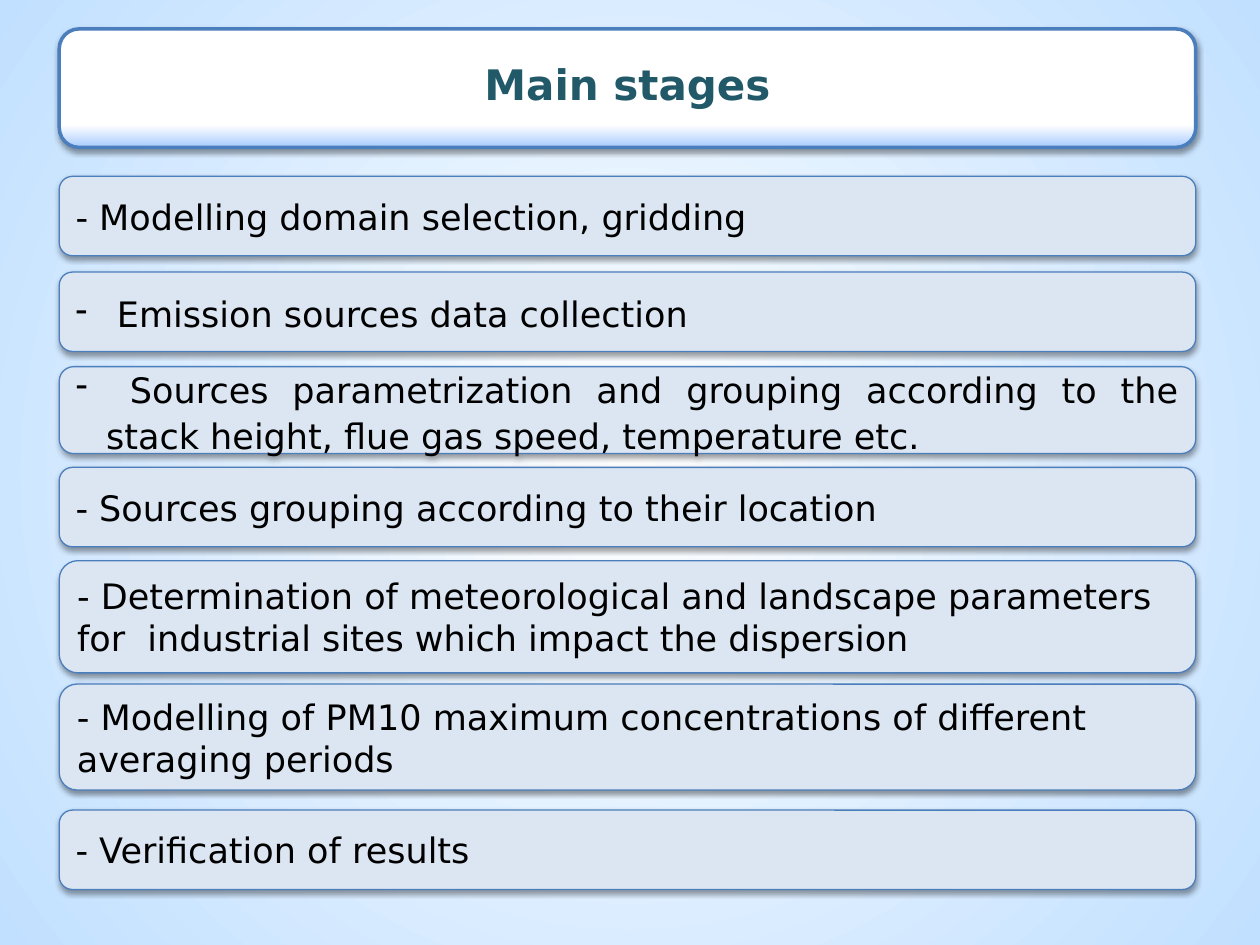
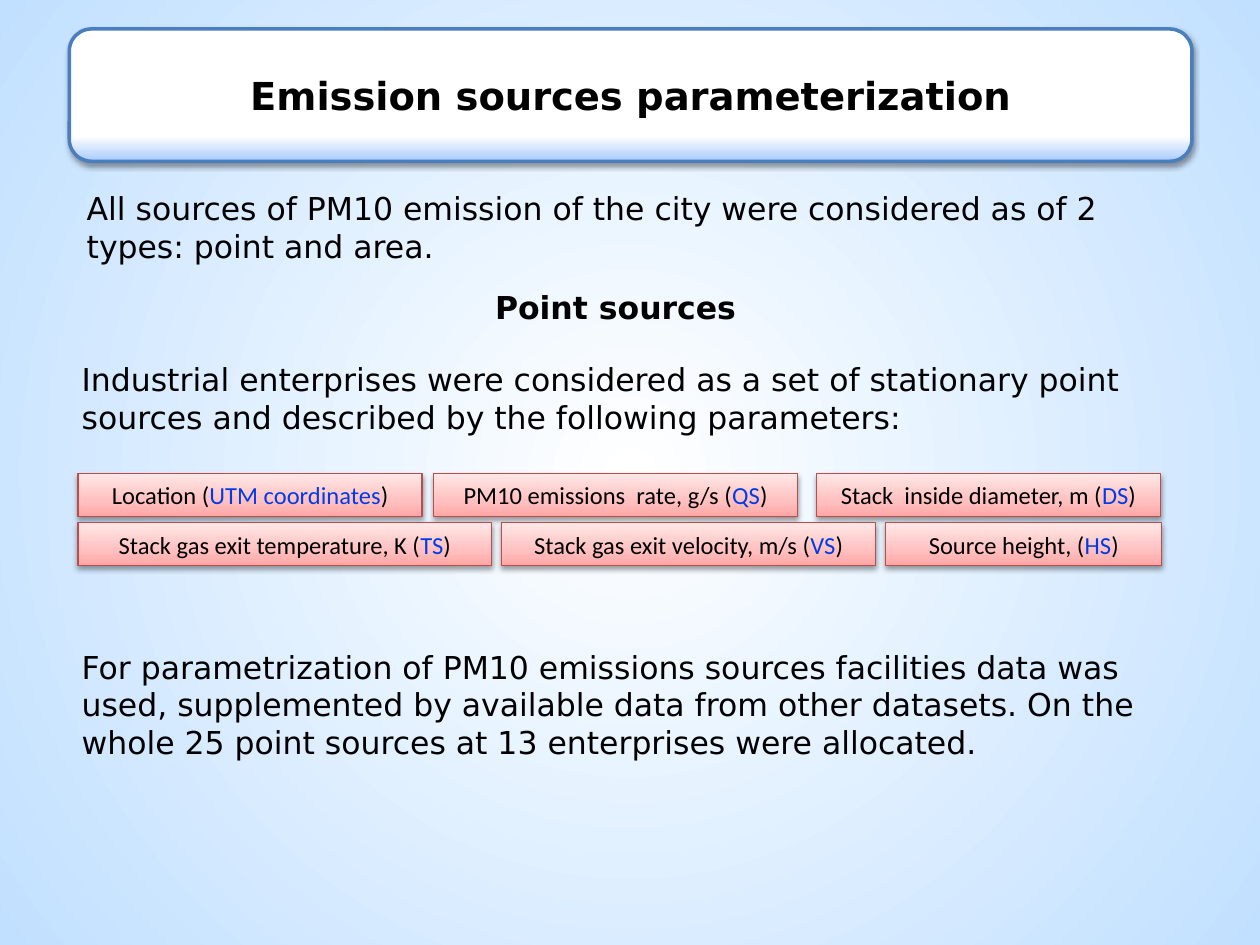
from pptx import Presentation
from pptx import util as u
from pptx.dml.color import RGBColor
from pptx.enum import shapes, text
from pptx.oxml import parse_xml
from pptx.oxml.ns import nsdecls, qn

COLORS = {
    "black": "000000", "teal": "215968", "link": "003CE6",
    "white": "FFFFFF", "sky": "C1E0FF", "title_base": "A7CBFF",
    "stage": "DCE6F2", "blue_line": "4B7EBC",
    "rose_dark": "FFA6A5", "rose": "FFC0BF", "rose_light": "FFE7E7", "red_line": "BF4C48",
}
PX = 9144
BODY_FONT = "DejaVu Sans"
UPWARD = '<a:lin ang="16200000" scaled="0"/>'
RADIAL = '<a:path path="circle"><a:fillToRect l="50000" t="50000" r="50000" b="50000"/></a:path>'
TITLE_STOPS = [(0, "title_base"), (19, "white")]
ROSE_STOPS = [(0, "rose_dark"), (35, "rose"), (100, "rose_light")]
SHADOW = (f'<a:outerShdw {nsdecls("a")} blurRad="40000" dist="20000" dir="5400000" rotWithShape="0">'
          '<a:srgbClr val="000000"><a:alpha val="38000"/></a:srgbClr></a:outerShdw>')

STAGES = [
    (140, 63, "- Modelling domain selection, gridding", False),
    (216, 63, " Emission sources data collection", True),
    (291, 69, " Sources parametrization and grouping according to the stack height, "
              "flue gas speed, temperature etc.", True),
    (371, 63, "- Sources grouping according to their location", False),
    (445, 89, "- Determination of meteorological and landscape parameters  "
              "for  industrial sites which impact the dispersion", False),
    (543, 84, "- Modelling of PM10 maximum concentrations of different averaging periods", False),
    (643, 63, "- Verification of results", False),
]
PARAMETER_ROWS = {
    376: [(62, 273, "Location (", "UTM coordinates"),
          (344, 289, "PM10 emissions  rate, g/s (", "QS"),
          (648, 273, "Stack  inside diameter, m (", "DS")],
    415: [(62, 328, "Stack gas exit temperature, K (", "TS"),
          (398, 297, "Stack gas exit velocity, m/s (", "VS"),
          (703, 219, "Source height, (", "HS")],
}


class Deck:
    """Holds the presentation style and draws elements on the current slide."""

    def __init__(self):
        self.presentation = Presentation()
        self.presentation.slide_width = 1000 * PX
        self.presentation.slide_height = 750 * PX

    def new_slide(self):
        """Start a blank slide with the radial sky background."""
        self.slide = self.presentation.slides.add_slide(self.presentation.slide_layouts[6])
        self.slide.background.fill.solid()
        self.gradient(self.slide, [(0, "white"), (100, "sky")], RADIAL)

    def gradient(self, owner, stops, direction):
        """Replace the solid fill of a slide or shape by a gradient."""
        solid = next(owner._element.iter(qn("a:solidFill")))
        stop_xml = "".join(f'<a:gs pos="{position * 1000}"><a:srgbClr val="{COLORS[color]}"/></a:gs>'
                           for position, color in stops)
        solid.getparent().replace(solid, parse_xml(
            f'<a:gradFill {nsdecls("a")} rotWithShape="1"><a:gsLst>{stop_xml}</a:gsLst>{direction}</a:gradFill>'))

    def box(self, kind, bounds, line, width, fill="white", stops=None):
        """Draw an outlined shape with a soft shadow below it."""
        shape = self.slide.shapes.add_shape(kind, *(value * PX for value in bounds))
        shape.fill.solid()
        shape.fill.fore_color.rgb = RGBColor.from_string(COLORS[fill])
        if stops:
            self.gradient(shape, stops, UPWARD)
        shape.line.color.rgb = RGBColor.from_string(COLORS[line])
        shape.line.width = u.Pt(width)
        shape.shadow.inherit = False
        shape._element.spPr.find(qn("a:effectLst")).append(parse_xml(SHADOW))
        return shape

    def set_text(self, shape, runs, size, color="black", font=BODY_FONT, bold=False,
                 align=text.PP_ALIGN.LEFT, anchor=text.MSO_ANCHOR.MIDDLE, dash=False):
        """Set (text, colour) runs as one paragraph; a colour of None keeps the paragraph's."""
        frame = shape.text_frame
        frame.word_wrap = True
        frame.vertical_anchor = anchor
        paragraph = frame.paragraphs[0]
        paragraph.alignment = align
        if dash:
            properties = paragraph._p.get_or_add_pPr()
            properties.set("marL", str(24 * PX))
            properties.set("indent", str(-24 * PX))
            properties.append(parse_xml(f'<a:buChar {nsdecls("a")} char="-"/>'))
            paragraph.line_spacing = 1.1
        paragraph.font.name = font
        paragraph.font.size = u.Pt(size)
        paragraph.font.bold = bold
        paragraph.font.color.rgb = RGBColor.from_string(COLORS[color])
        for words, run_color in runs:
            run = paragraph.add_run()
            run.text = words
            if run_color:
                run.font.color.rgb = RGBColor.from_string(COLORS[run_color])
        return paragraph

    def title(self, bounds, words, size, color="black", line_spacing=1.0):
        """Draw the title panel."""
        shape = self.box(shapes.MSO_SHAPE.ROUNDED_RECTANGLE, bounds, "blue_line", 2, stops=TITLE_STOPS)
        paragraph = self.set_text(shape, [(words, None)], size, color, bold=True, align=text.PP_ALIGN.CENTER)
        paragraph.line_spacing = line_spacing
        paragraph.space_before = u.Pt(size * 0.2)

    def stage(self, top, height, words, dash):
        """Draw one stage of the work as a full-width panel."""
        shape = self.box(shapes.MSO_SHAPE.ROUNDED_RECTANGLE, (47, top, 902, height),
                         "blue_line", 0.75, fill="stage")
        align = text.PP_ALIGN.JUSTIFY if dash else text.PP_ALIGN.LEFT
        self.set_text(shape, [(words, None)], 20, align=align, dash=dash)

    def parameter(self, left, top, width, label, symbol):
        """Draw a source parameter with its symbol highlighted."""
        shape = self.box(shapes.MSO_SHAPE.RECTANGLE, (left, top, width, 34),
                         "red_line", 0.75, stops=ROSE_STOPS)
        self.set_text(shape, [(label, None), (symbol, "link"), (")", None)], 14, font="Calibri",
                      align=text.PP_ALIGN.CENTER)

    def note(self, bounds, words, **style):
        """Add a plain text box."""
        shape = self.slide.shapes.add_textbox(*(value * PX for value in bounds))
        self.set_text(shape, [(words, None)], 18, anchor=text.MSO_ANCHOR.TOP, **style)


def main():
    deck = Deck()

    deck.new_slide()
    deck.title((47, 23, 902, 94), "Main stages", 24, "teal", line_spacing=0.8)
    for stage in STAGES:
        deck.stage(*stage)

    deck.new_slide()
    deck.title((55, 23, 891, 105), "Emission sources parameterization", 22)
    deck.note((59, 145, 906, 71), "All sources of PM10 emission of the city were considered "
                                  "as of 2 types: point and area.")
    deck.note((59, 224, 859, 40), "Point sources", bold=True, align=text.PP_ALIGN.CENTER)
    deck.note((55, 281, 898, 71), "Industrial enterprises were considered as a set of stationary point "
                                  "sources and described by the following parameters:")
    for top, parameters in PARAMETER_ROWS.items():
        for left, width, label, symbol in parameters:
            deck.parameter(left, top, width, label, symbol)
    deck.note((55, 509, 906, 101), "For parametrization of PM10 emissions sources facilities data was used, "
                                   "supplemented by available data from other datasets. On the whole "
                                   "25 point sources at 13 enterprises were allocated.")

    deck.presentation.save("out.pptx")


if __name__ == "__main__":
    main()
